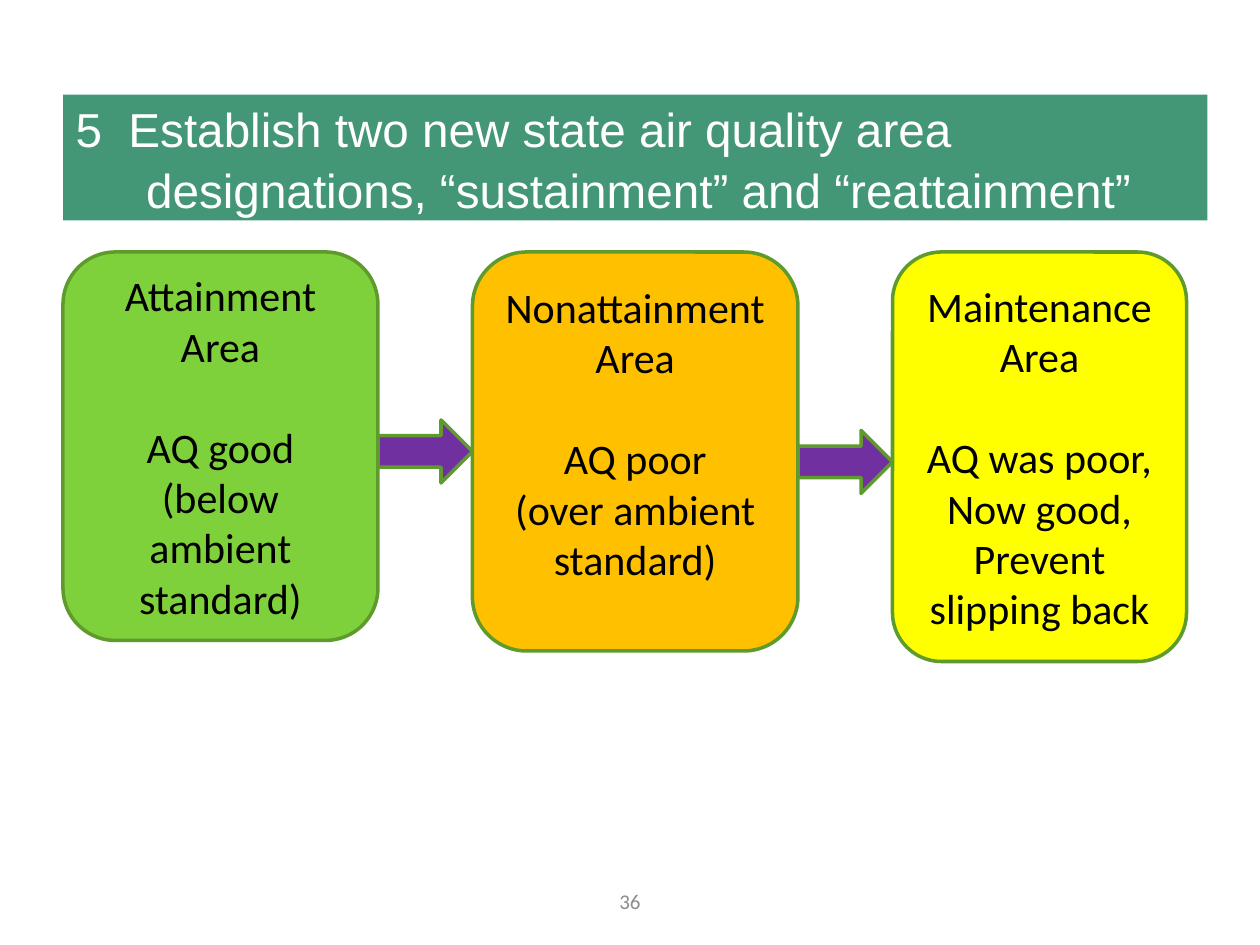
"""Build the slide on state air quality area designations."""
from dataclasses import dataclass

from pptx import Presentation
from pptx.dml.color import RGBColor
from pptx.enum.shapes import MSO_SHAPE
from pptx.enum.text import MSO_ANCHOR, MSO_AUTO_SIZE, PP_ALIGN
from pptx.util import Inches, Pt

ROUND, ARROW = MSO_SHAPE.ROUNDED_RECTANGLE, MSO_SHAPE.RIGHT_ARROW
LEFT, CENTER = PP_ALIGN.LEFT, PP_ALIGN.CENTER
MIDDLE, FIXED = MSO_ANCHOR.MIDDLE, MSO_AUTO_SIZE.NONE
UNIT = Inches(1) // 12
EDGE, TOP, GAP, HEAD = 6, 24, 9, 6


@dataclass(frozen=True)
class Theme:
    """Colours, fonts and type sizes."""
    banner: str = "439777"
    light: str = "FFFFFF"
    dark: str = "000000"
    muted: str = "8C8C8C"
    line: str = "5E9B2C"
    arrow: str = "7030A0"
    head: str = "Arial"
    body: str = "Calibri"
    title: float = 27.2
    text: float = 24
    small: float = 12
    stroke: float = 2


@dataclass(frozen=True)
class Card:
    """One area designation, sized in grid columns and rows."""
    name: str
    notes: tuple[str, ...]
    fill: str
    cols: int
    rows: int
    base: float = 0.05


THEME = Theme()
CARDS = (
    Card("Attainment Area", ("AQ good", "(below ambient standard)"),
         "7FD13B", 30, 37),
    Card("Nonattainment Area", ("AQ poor", "(over ambient standard)"),
         "FFC000", 31, 38, 0.35),
    Card("Maintenance Area",
         ("AQ was poor,", "Now good,", "Prevent slipping back"),
         "FFFF00", 28, 39),
)


def grid(*cells: float) -> list[int]:
    """Turn grid cells into lengths."""
    return [int(cell * UNIT) for cell in cells]


def style(para, face: str, size: float, color: str, align=CENTER) -> None:
    """Set the font and alignment of a paragraph."""
    para.alignment = align
    para.font.name, para.font.size = face, Pt(size)
    para.font.color.rgb = RGBColor.from_string(color)


def paint(shape, fill: str) -> None:
    """Give a shape a solid fill."""
    shape.fill.solid()
    shape.fill.fore_color.rgb = RGBColor.from_string(fill)


def block(slide, kind, box: list[int], fill: str):
    """Draw a filled and outlined preset shape."""
    shape = slide.shapes.add_shape(kind, *box)
    shape.shadow.inherit = False
    paint(shape, fill)
    shape.line.color.rgb = RGBColor.from_string(THEME.line)
    shape.line.width = Pt(THEME.stroke)
    return shape


def banner(slide, text: str) -> None:
    """Place the title as a banner with a hanging indent."""
    title = slide.shapes.title
    title.left, title.top, title.width, title.height = grid(EDGE, 9, 109, 12)
    paint(title, THEME.banner)
    frame = title.text_frame
    frame.text = text
    frame.word_wrap, frame.auto_size = True, FIXED
    frame.vertical_anchor = MIDDLE
    para = frame.paragraphs[0]
    style(para, THEME.head, THEME.title, THEME.light, LEFT)
    para.line_spacing = 1.06
    props = para._p.get_or_add_pPr()
    props.set("marL", str(Inches(0.56)))
    props.set("indent", str(Inches(-0.56)))


def panel(slide, card: Card, left: int) -> None:
    """Draw a card with its name set apart from its notes."""
    shape = block(slide, ROUND, grid(left, TOP, card.cols, card.rows), card.fill)
    frame = shape.text_frame
    frame.word_wrap, frame.vertical_anchor = True, MIDDLE
    frame.margin_bottom = Inches(card.base)
    frame.text = "\n".join((card.name, *card.notes))
    for para in frame.paragraphs:
        style(para, THEME.body, THEME.text, THEME.dark)
    frame.paragraphs[1].space_before = Pt(29)


def number(slide, text: str) -> None:
    """Write the slide number at the foot."""
    frame = slide.shapes.add_textbox(*grid(41, 83.4, 38, 4.8)).text_frame
    frame.word_wrap, frame.vertical_anchor = True, MIDDLE
    frame.text = text
    style(frame.paragraphs[0], THEME.body, THEME.small, THEME.muted)


def main() -> None:
    """Build and save the slide."""
    deck = Presentation()
    deck.slide_width, deck.slide_height = grid(120, 90)
    slide = deck.slides.add_slide(deck.slide_layouts[5])
    number(slide, "36")
    banner(slide, "5  Establish two new state air quality area designations, "
                  "“sustainment” and “reattainment”")
    left = EDGE
    for card in CARDS:
        panel(slide, card, left)
        left += card.cols
        if card is not CARDS[-1]:
            block(slide, ARROW, grid(left, card.rows + 3, GAP, HEAD), THEME.arrow)
        left += GAP
    deck.save("out.pptx")


if __name__ == "__main__":
    main()
